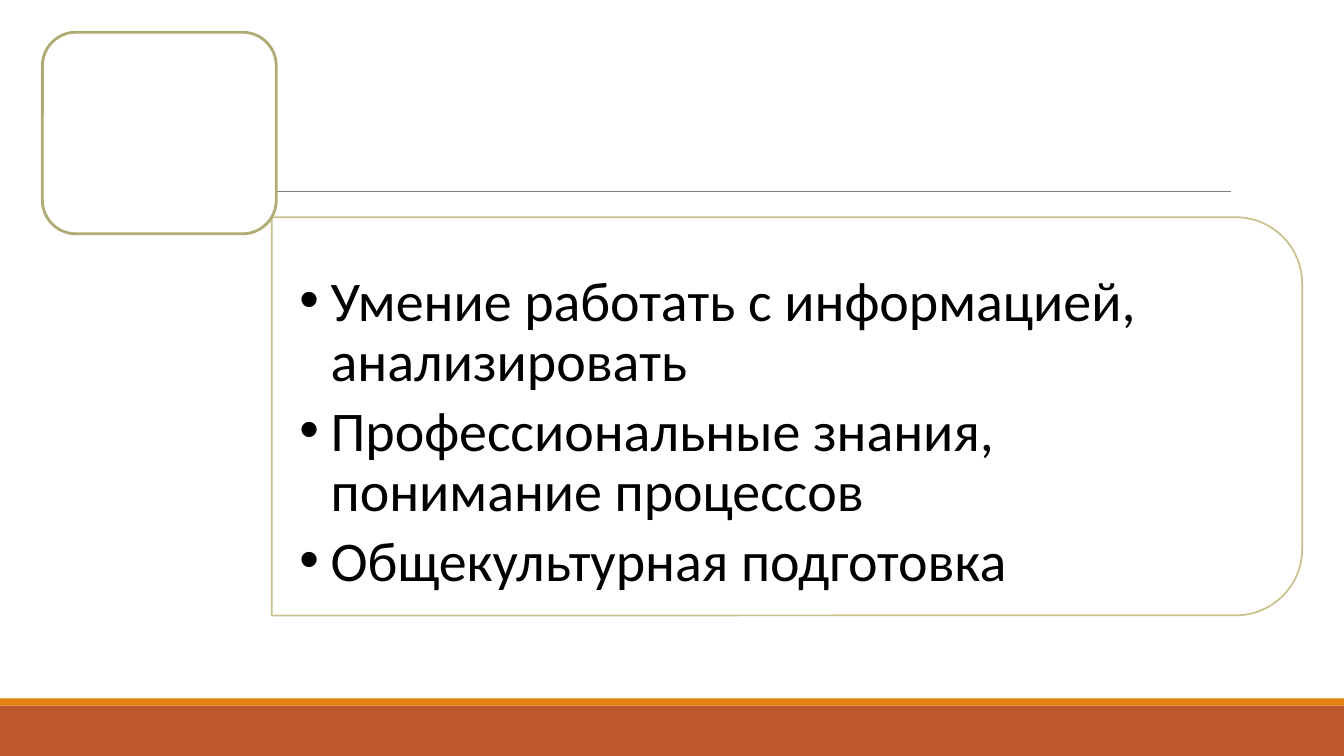
from lxml import etree
from pptx import Presentation
from pptx.dml.color import RGBColor
from pptx.enum.shapes import MSO_CONNECTOR, MSO_SHAPE
from pptx.enum.text import MSO_ANCHOR, MSO_AUTO_SIZE, PP_ALIGN
from pptx.oxml.ns import qn
from pptx.util import Inches, Pt

RECT = MSO_SHAPE.RECTANGLE
ROUND = MSO_SHAPE.ROUNDED_RECTANGLE
TAB = MSO_SHAPE.ROUND_2_SAME_RECTANGLE
STRAIGHT = MSO_CONNECTOR.STRAIGHT
MIDDLE = MSO_ANCHOR.MIDDLE
LEFT = PP_ALIGN.LEFT
FIXED = MSO_AUTO_SIZE.NONE

COLORS = {
    "white": "FFFFFF",
    "black": "000000",
    "rust": "BD582C",
    "orange": "E48312",
    "gray": "808080",
    "sand": "C2BC80",
    "olive": "B0AB74",
}
SKILLS = [
    "Умение работать с информацией, анализировать",
    "Профессиональные знания, понимание процессов",
    "Общекультурная подготовка",
]
FRAME = {
    "word_wrap": True,
    "auto_size": FIXED,
    "vertical_anchor": MIDDLE,
    "margin_left": Inches(0.27),
    "margin_right": Inches(0.27),
    "margin_top": Inches(0.46),
    "margin_bottom": Inches(0.14),
}
PARA = {
    "alignment": LEFT,
    "line_spacing": 0.9,
    "space_before": Pt(0),
    "space_after": Pt(6.5),
}
FONT = {"name": "Calibri", "size": Pt(40), "bold": False}


def color(name):
    return RGBColor.from_string(COLORS[name])


def apply(target, values):
    for name, value in values.items():
        setattr(target, name, value)


def add_box(slide, kind, box, fill, line=None, width=0):
    shape = slide.shapes.add_shape(kind, *map(Inches, box))
    shape.shadow.inherit = False
    shape.fill.solid()
    shape.fill.fore_color.rgb = color(fill)
    if line:
        shape.line.color.rgb = color(line)
        shape.line.width = Pt(width)
    else:
        shape.line.fill.background()
    return shape


def fade(shape, percent):
    """Set the opacity of the fill and the outline."""
    for tint in shape._element.spPr.iter(qn("a:srgbClr")):
        etree.SubElement(tint, qn("a:alpha"), val=str(percent * 1000))


def add_rule(slide, start, end):
    rule = slide.shapes.add_connector(STRAIGHT, *map(Inches, start + end))
    rule.line.color.rgb = color("gray")
    rule.line.width = Pt(0.5)
    etree.SubElement(rule._element.spPr, qn("a:effectLst"))


def fill_list(body, box, items):
    names = ("left", "top", "width", "height")
    apply(body, dict(zip(names, map(Inches, box))))
    frame = body.text_frame
    frame.text = "\n".join(items)
    apply(frame, FRAME)
    for para in frame.paragraphs:
        apply(para, PARA)
        apply(para.font, FONT)
        para.font.color.rgb = color("black")
        props = para._p.get_or_add_pPr()
        props.set("marL", str(Inches(0.31)))
        props.set("indent", str(-Inches(0.31)))


def main():
    deck = Presentation()
    deck.slide_width, deck.slide_height = Inches(13.33), Inches(7.5)
    slide = deck.slides.add_slide(deck.slide_layouts[1])
    title, body = slide.placeholders
    title._element.getparent().remove(title._element)

    add_box(slide, RECT, (0, 7, 13.33, 0.5), "rust")
    add_box(slide, RECT, (0, 6.93, 13.33, 0.07), "orange")
    add_rule(slide, (1.31, 1.9), (12.21, 1.9))

    panel = add_box(slide, TAB, (5.83, -0.98, 3.95, 10.22), "white", "sand", 1.25)
    panel.rotation = 90
    fade(panel, 90)
    fill_list(body, (2.7, 2.35, 10.03, 3.57), SKILLS)
    panel._element.addnext(body._element)

    add_box(slide, ROUND, (0.42, 0.32, 2.32, 2), "white", "olive", 2)
    deck.save("out.pptx")


if __name__ == "__main__":
    main()
